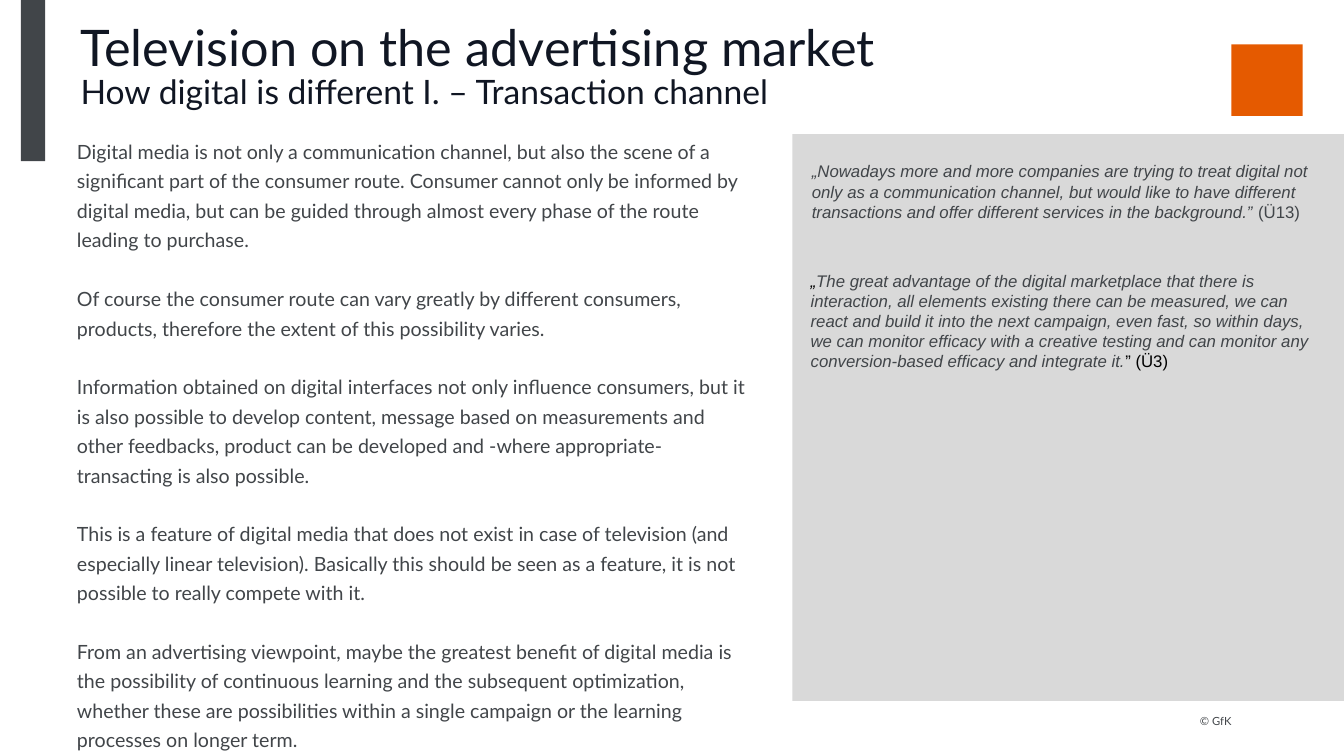
from pptx import Presentation
from pptx.dml.color import RGBColor
from pptx.enum.shapes import MSO_SHAPE
from pptx.enum.text import MSO_ANCHOR, PP_ALIGN
from pptx.util import Cm, Pt

SLATE = RGBColor(0x41, 0x45, 0x49)
NAVY = RGBColor(0x10, 0x16, 0x23)
BLACK = RGBColor(0, 0, 0)
PALE = RGBColor(0xD9, 0xD9, 0xD9)
ORANGE = RGBColor(0xE5, 0x5A, 0x00)

BODY = [
    "Digital media is not only a communication channel, but also the scene of a "
    "significant part of the consumer route. Consumer cannot only be informed by "
    "digital media, but can be guided through almost every phase of the route "
    "leading to purchase.",
    "Of course the consumer route can vary greatly by different consumers, "
    "products, therefore the extent of this possibility varies.",
    "Information obtained on digital interfaces not only influence consumers, but "
    "it is also possible to develop content, message based on measurements and "
    "other feedbacks, product can be developed and -where appropriate- "
    "transacting is also possible.",
    "This is a feature of digital media that does not exist in case of television "
    "(and especially linear television). Basically this should be seen as a "
    "feature, it is not possible to really compete with it.",
    "From an advertising viewpoint, maybe the greatest benefit of digital media is "
    "the possibility of continuous learning and the subsequent optimization, "
    "whether these are possibilities within a single campaign or the learning "
    "processes on longer term.",
]
# Each quote is a list of (text, colour, italic)
FIRST = [
    ("„Nowadays more and more companies are trying to treat digital not only as a "
     "communication channel, but would like to have different transactions and "
     "offer different services in the background.” ", SLATE, True),
    ("(Ü13)", SLATE, False),
]
SECOND = [
    ("„", BLACK, True),
    ("The great advantage of the digital marketplace that there is interaction, all "
     "elements existing there can be measured, we can react and build it into the "
     "next campaign, even fast, so within days, we can monitor efficacy with a "
     "creative testing and can monitor any conversion-based efficacy and integrate "
     "it.", SLATE, True),
    ("” (Ü3)", BLACK, False),
]


def block(slide, box, fill):
    """Plain filled rectangle."""
    shape = slide.shapes.add_shape(MSO_SHAPE.RECTANGLE, *map(Cm, box))
    shape.shadow.inherit = False
    shape.fill.solid()
    shape.fill.fore_color.rgb = fill
    shape.line.fill.background()


def frame(slide, box, **form):
    """Text box without margins; returns its text frame."""
    text = slide.shapes.add_textbox(*map(Cm, box)).text_frame
    base = dict(margin_left=0, margin_top=0, margin_right=0, margin_bottom=0,
                word_wrap=True, vertical_anchor=MSO_ANCHOR.TOP)
    for key, value in (base | form).items():
        setattr(text, key, value)
    return text


def write(para, text, color, **form):
    """Add one formatted run to a paragraph."""
    run = para.add_run()
    run.text = text
    run.font.color.rgb = color
    for key, value in form.items():
        setattr(run.font, key, value)


def header(slide, box):
    left, top, width, height = box
    block(slide, (left, top, 0.61, height), SLATE)
    block(slide, (left + 30.5, top + 1.12, 1.8, 1.8), ORANGE)
    # Title and subtitle
    para = frame(slide, (left + 1.5, top + 0.64, 21.46, 1.37)).paragraphs[0]
    para.line_spacing = 0.85
    write(para, "Television on the advertising market", NAVY, name="Lato", size=Pt(36))
    para.add_line_break()
    write(para, "How digital is different I. – Transaction channel", NAVY,
          name="Lato", size=Pt(24))


def body(slide, box):
    text = frame(slide, box)
    for index, line in enumerate(BODY):
        para = text.add_paragraph() if index else text.paragraphs[0]
        para.line_spacing = 1.25
        if index:
            para.space_before = Pt(21)
        write(para, line, SLATE, name="Lato", size=Pt(14))


def quotes(slide, box):
    left, top, width, height = box
    block(slide, box, PALE)
    for shift, down, tall, quote in ((0.49, 0.48, 3.84, FIRST),
                                     (0.46, 3.23, 1.93, SECOND)):
        area = left + shift, top + down, 13, tall
        para = frame(slide, area, margin_top=Cm(0.2)).paragraphs[0]
        for words, color, slant in quote:
            write(para, words, color, name="Arial", size=Pt(12), italic=slant)


def footer(slide, box):
    text = frame(slide, box, word_wrap=False, vertical_anchor=MSO_ANCHOR.BOTTOM)
    para = text.paragraphs[0]
    para.alignment = PP_ALIGN.RIGHT
    para.line_spacing = 1.25
    write(para, "© GfK", SLATE, name="Lato", size=Pt(8))


def main():
    deck = Presentation()
    deck.slide_width, deck.slide_height = Cm(33.87), Cm(19.05)
    slide = deck.slides.add_slide(deck.slide_layouts[6])
    header(slide, (0.53, 0, 33.34, 4.06))
    body(slide, (1.94, 3.38, 16.92, 14.53))
    quotes(slide, (19.97, 3.38, 13.9, 14.28))
    footer(slide, (29.64, 17.96, 1.4, 0.38))
    deck.save("out.pptx")


if __name__ == "__main__":
    main()
